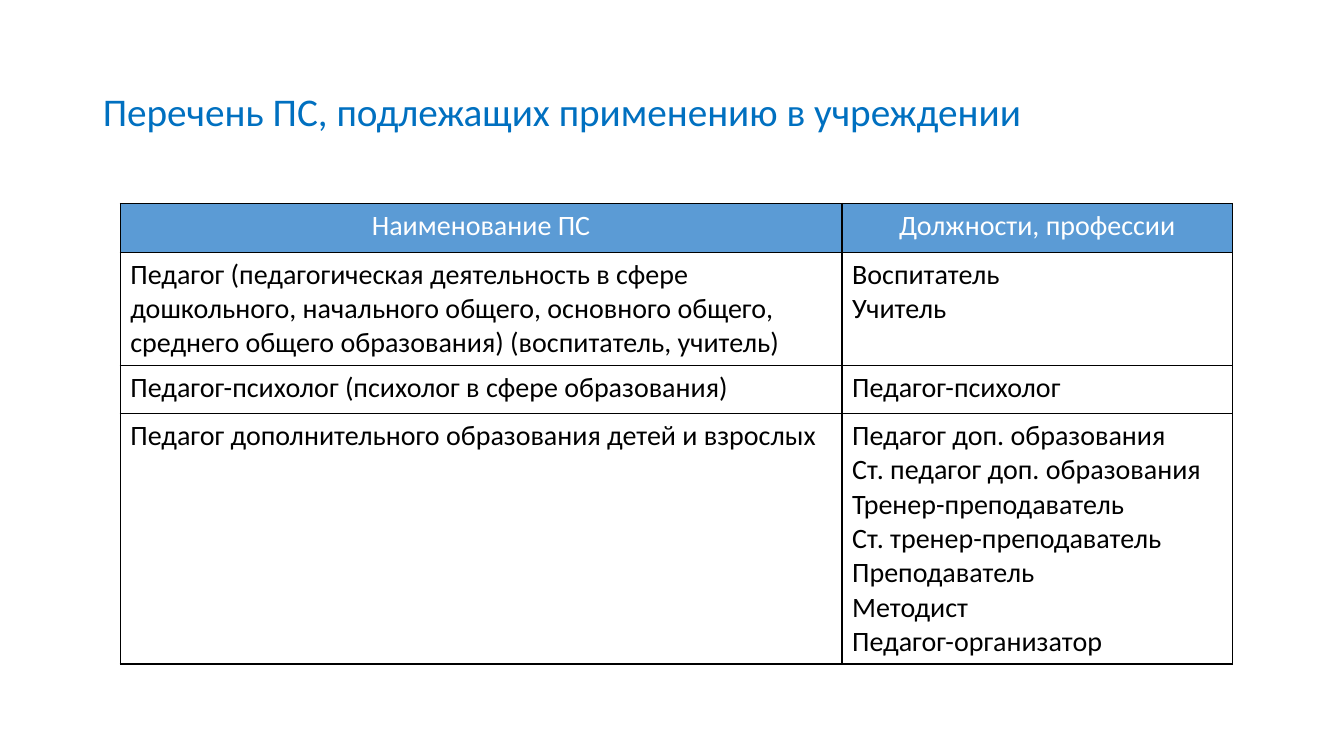
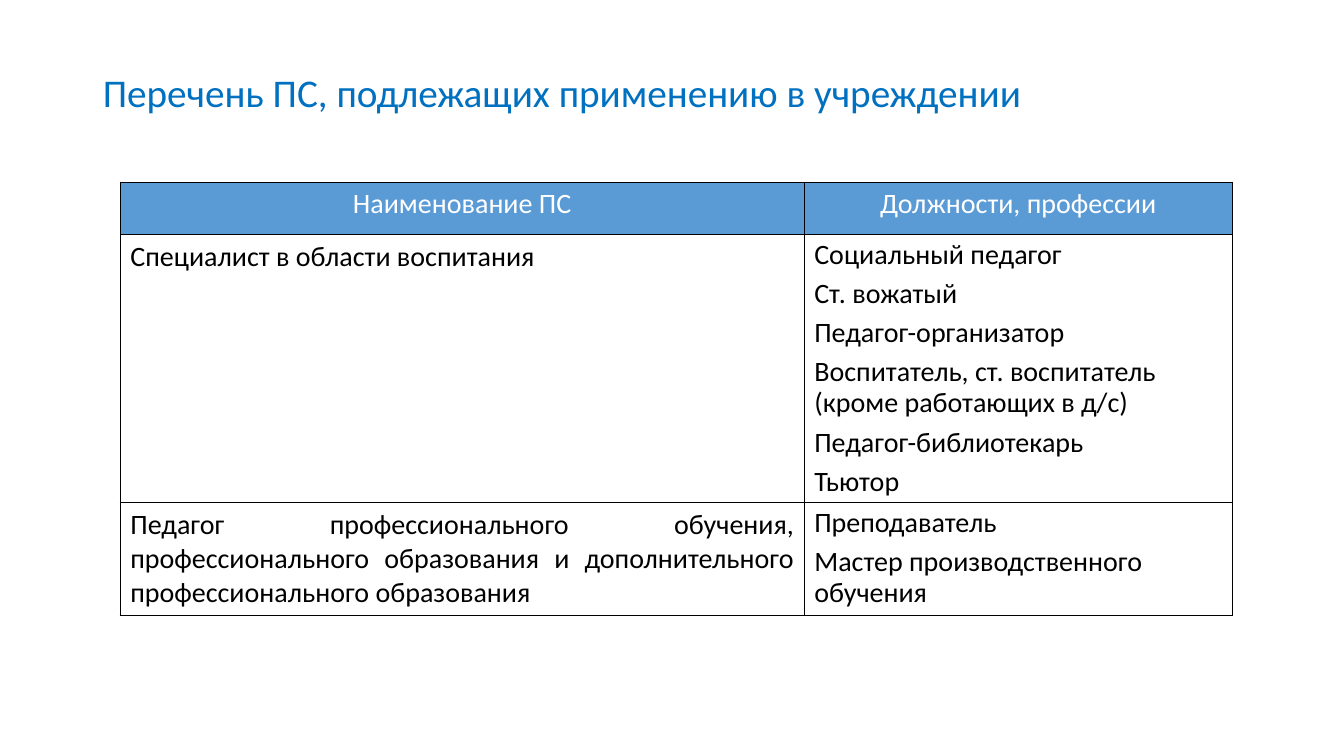
from lxml import etree
from pptx import Presentation
from pptx.dml.color import RGBColor
from pptx.enum.text import MSO_ANCHOR, PP_ALIGN
from pptx.oxml.ns import qn
from pptx.util import Inches, Pt

LEFT, CENTER, JUSTIFY = PP_ALIGN.LEFT, PP_ALIGN.CENTER, PP_ALIGN.JUSTIFY
MIDDLE, TOP = MSO_ANCHOR.MIDDLE, MSO_ANCHOR.TOP

COLORS = {
    "title": "0070C0",
    "header": "5B9BD5",
    "paper": "FFFFFF",
    "text": "000000",
    "border": "000000",
}
FONT = "Calibri"
TITLE = "Перечень ПС, подлежащих применению в учреждении"
HEADERS = ["Наименование ПС", "Должности, профессии"]
SPACED = {"line_spacing": 0.9, "space_before": 6}


def write_text(text_frame, text, size=20, color="text", align=LEFT,
               line_spacing=1.0, space_before=0):
    """Fill a text frame, one paragraph for each line of text."""
    for index, line in enumerate(text.split("\n")):
        paragraph = text_frame.paragraphs[0] if index == 0 else text_frame.add_paragraph()
        paragraph.alignment = align
        paragraph.line_spacing = line_spacing
        paragraph.space_before = Pt(space_before)
        run = paragraph.add_run()
        run.text = line
        run.font.name = FONT
        run.font.size = Pt(size)
        run.font.color.rgb = RGBColor.from_string(COLORS[color])


class Deck:
    """Shared style and the current slide; lengths are percent of the slide."""

    def __init__(self):
        self.presentation = Presentation()
        self.presentation.slide_width = Inches(13.33)
        self.presentation.slide_height = Inches(7.5)
        self.slide = None

    def across(self, percent):
        return round(self.presentation.slide_width * percent / 100)

    def down(self, percent):
        return round(self.presentation.slide_height * percent / 100)

    def add_slide(self, title, top):
        layout = self.presentation.slide_layouts.get_by_name("Title Only")
        self.slide = self.presentation.slides.add_slide(layout)
        shape = self.slide.shapes.title
        shape.left, shape.top = self.across(6.9), self.down(top)
        shape.width, shape.height = self.across(86.25), self.down(19.33)
        shape.text_frame.word_wrap = True
        shape.text_frame.vertical_anchor = MIDDLE
        write_text(shape.text_frame, title, size=28, color="title", line_spacing=0.9)

    def add_table(self, rows, top, first_column, heights):
        """Each body cell is a pair of its text and its paragraph format."""
        header = [(text, {"color": "paper", "align": CENTER}) for text in HEADERS]
        width = self.across(82.75)
        table = self.slide.shapes.add_table(
            len(rows) + 1, len(HEADERS), self.across(8.95), self.down(top),
            width, self.down(sum(heights))).table
        table.columns[0].width = round(width * first_column / 100)
        table.columns[1].width = width - table.columns[0].width
        for row_index, cells in enumerate([header] + rows):
            table.rows[row_index].height = self.down(heights[row_index])
            for column_index, (text, style) in enumerate(cells):
                cell = table.cell(row_index, column_index)
                self.format_cell(cell, "paper" if row_index else "header")
                write_text(cell.text_frame, text, **style)

    def format_cell(self, cell, fill):
        cell.vertical_anchor = TOP
        # Borders come before the fill in the cell properties
        properties = cell._tc.get_or_add_tcPr()
        for side in ("a:lnL", "a:lnR", "a:lnT", "a:lnB"):
            line = etree.SubElement(properties, qn(side), w=str(Pt(1)))
            solid = etree.SubElement(line, qn("a:solidFill"))
            etree.SubElement(solid, qn("a:srgbClr"), val=COLORS["border"])
        cell.fill.solid()
        cell.fill.fore_color.rgb = RGBColor.from_string(COLORS[fill])


def main():
    deck = Deck()

    # Teachers, psychologists and additional education
    deck.add_slide(TITLE, top=5.33)
    deck.add_table([
        [("Педагог (педагогическая деятельность в сфере дошкольного, начального общего, "
          "основного общего, среднего общего образования) (воспитатель, учитель)", {}),
         ("Воспитатель\nУчитель", {})],
        [("Педагог-психолог (психолог в сфере образования)", {}),
         ("Педагог-психолог", {})],
        [("Педагог дополнительного образования детей и взрослых", {}),
         ("Педагог доп. образования\nСт. педагог доп. образования\n"
          "Тренер-преподаватель\nСт. тренер-преподаватель\n"
          "Преподаватель\nМетодист\nПедагог-организатор", {})],
    ], top=26.9, first_column=64.9, heights=[6.5, 14.9, 6.4, 33])

    # Upbringing and vocational training
    deck.add_slide(TITLE, top=2.93)
    deck.add_table([
        [("Специалист в области воспитания", {}),
         ("Социальный педагог\nСт. вожатый\nПедагог-организатор\n"
          "Воспитатель, ст. воспитатель (кроме работающих в д/с)\n"
          "Педагог-библиотекарь\nТьютор", SPACED)],
        [("Педагог профессионального обучения, профессионального образования "
          "и дополнительного профессионального образования", {"align": JUSTIFY}),
         ("Преподаватель\nМастер производственного обучения", SPACED)],
    ], top=24.1, first_column=61.5, heights=[6.9, 35.4, 14.9])

    deck.presentation.save("out.pptx")


if __name__ == "__main__":
    main()
